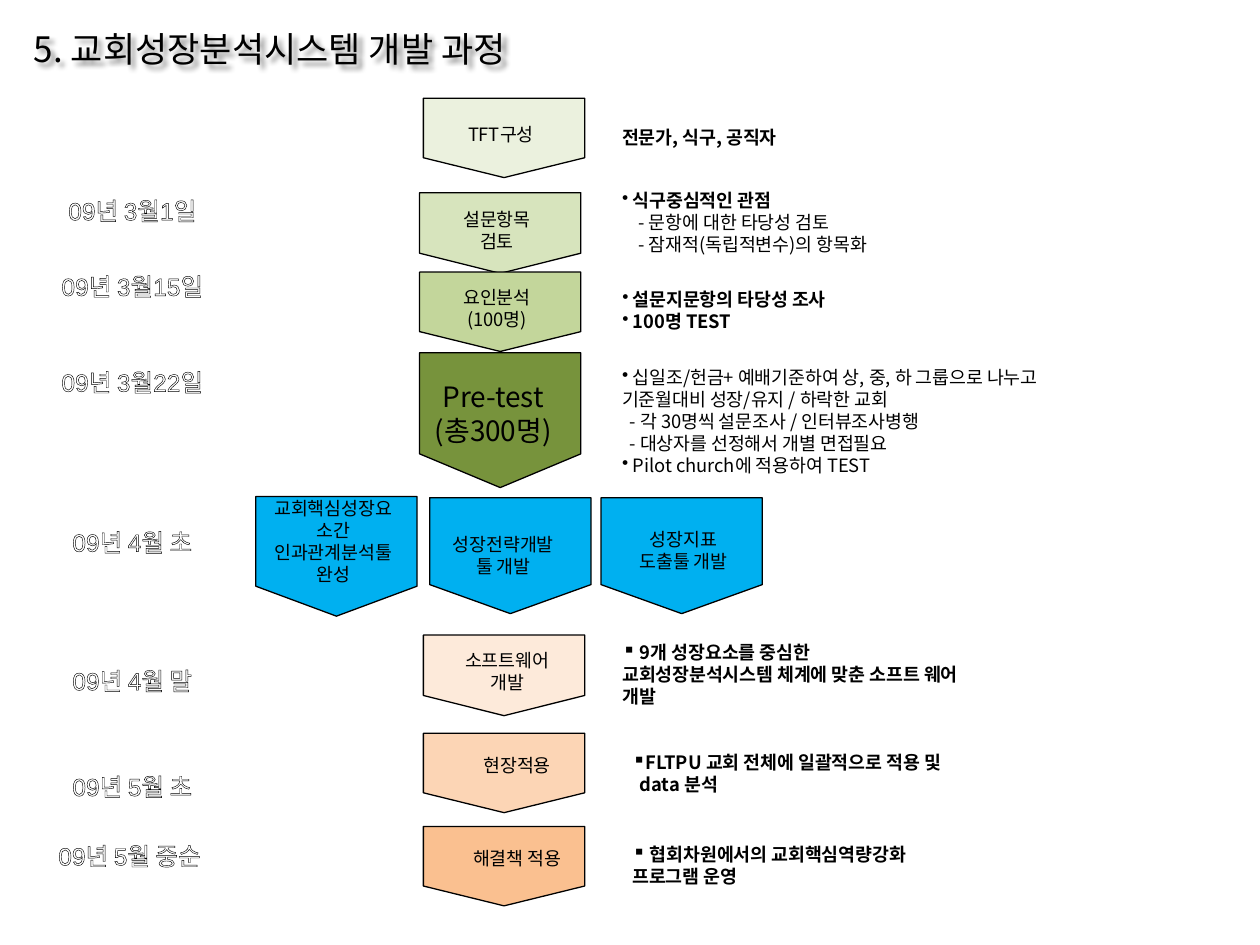
from dataclasses import dataclass

from lxml import etree
from pptx import Presentation
from pptx.dml.color import RGBColor
from pptx.enum.shapes import MSO_SHAPE
from pptx.enum.text import MSO_ANCHOR, PP_ALIGN
from pptx.oxml import parse_xml
from pptx.oxml.ns import nsdecls, qn
from pptx.util import Inches, Pt

PENTAGON = MSO_SHAPE.PENTAGON
TOP, MIDDLE = MSO_ANCHOR.TOP, MSO_ANCHOR.MIDDLE
LEFT, CENTER = PP_ALIGN.LEFT, PP_ALIGN.CENTER


@dataclass(frozen=True)
class Theme:
    """Colours, fonts and type sizes of the slide."""
    ink: str = "000000"
    paper: str = "FFFFFF"
    blue: str = "00B0F0"
    font: str = "Noto Sans CJK KR"
    date_font: str = "Arial"
    title: float = 20
    pretest: float = 16
    date: float = 14
    body: float = 10.5
    line: float = 0.75


@dataclass(frozen=True)
class Box:
    """A rectangle in inches."""
    left: float
    top: float
    width: float
    height: float

    def inside(self, left, top, width, height):
        """Return a box placed relative to this one."""
        return Box(self.left + left, self.top + top, width, height)

    def lengths(self):
        """Return the rectangle as slide lengths."""
        return [Inches(n) for n in (self.left, self.top, self.width, self.height)]


THEME = Theme()
ARROW_WIDTH = 1.28
LABEL_WIDTH = 1.17

# left, top, height, fill, text, label left, label top, label height, type size
STAGES = [
    (3.36, 0.78, 0.63, "EBF1DE", "TFT구성", 0.03, 0, 0.57, THEME.body),
    (3.33, 1.53, 0.64, "D7E4BD", "설문항목\n검토", 0.03, 0.01, 0.57, THEME.body),
    (3.33, 2.16, 0.63, "C3D69B", "요인분석\n(100명)", 0.03, 0, 0.57, THEME.body),
    (3.33, 2.8, 1.07, "77933C", "Pre-test\n(총300명)", 0, 0, 0.96, THEME.pretest),
    (2.03, 3.94, 0.95, THEME.blue, "교회핵심성장요소간 인과관계분석툴완성", 0.03, -0.07, 0.85, THEME.body),
    (3.41, 3.95, 0.92, THEME.blue, "성장전략개발\n툴 개발", 0, 0.17, 0.57, THEME.body),
    (4.77, 3.95, 0.92, THEME.blue, "성장지표\n도출툴 개발", 0.07, 0, 0.83, THEME.body),
    (3.36, 5.04, 0.64, "FDEADA", "소프트웨어\n개발", 0.08, 0, 0.57, THEME.body),
    (3.36, 5.82, 0.63, "FCD5B5", "현장적용", 0.16, -0.03, 0.57, THEME.body),
    (3.36, 6.56, 0.63, "FAC090", "해결책 적용", 0.16, -0.03, 0.57, THEME.body),
]

DATES = [
    (1.46, "09년 3월1일"), (2.06, "09년 3월15일"), (2.82, "09년 3월22일"),
    (4.09, "09년 4월 초"), (5.19, "09년 4월 말"), (6.03, "09년 5월 초"),
    (6.58, "09년 5월 중순 "),
]

# box, then lines of bullet, text, bold, left margin, first-line indent
NOTES = [
    (Box(4.84, 0.95, 2.66, 0.33), [("", "전문가, 식구, 공직자", True, 0, 0)]),
    (Box(4.84, 1.45, 2.5, 0.74), [
        ("•", " 식구중심적인 관점", True, 0, 0),
        ("", "- 문항에 대한 타당성 검토", False, 0.13, 0),
        ("", "- 잠재적(독립적변수)의 항목화", False, 0.13, 0)]),
    (Box(4.84, 2.24, 3.98, 0.45), [
        ("•", " 설문지문항의 타당성 조사", True, 0, 0),
        ("•", " 100명 TEST", True, 0, 0)]),
    (Box(4.84, 2.86, 4.06, 1.15), [
        ("•", " 십일조/헌금+ 예배기준하여 상, 중, 하 그룹으로 나누고 기준월대비 성장/유지 / 하락한 교회", False, 0, 0),
        ("", "- 각 30명씩 설문조사 / 인터뷰조사병행", False, 0.06, 0),
        ("", "- 대상자를 선정해서 개별 면접필요", False, 0.06, 0),
        ("•", " Pilot church에 적용하여 TEST", False, 0, 0)]),
    (Box(4.84, 5.04, 2.89, 0.53), [
        ("▪", " 9개 성장요소를 중심한 교회성장분석시스템 체계에 맞춘 소프트 웨어 개발", True, 0, 0)]),
    (Box(4.92, 5.91, 2.73, 0.53), [
        ("▪", "FLTPU 교회 전체에 일괄적으로 적용 및 data 분석", True, 0.06, -0.06)]),
    (Box(4.92, 6.64, 2.73, 0.53), [
        ("▪", " 협회차원에서의 교회핵심역량강화 프로그램 운영", True, 0, 0)]),
]


def add_text(page, box, text, size, align=LEFT, anchor=TOP, font=THEME.font, color=THEME.ink):
    """Add a wrapped text box and return it."""
    shape = page.shapes.add_textbox(*box.lengths())
    frame = shape.text_frame
    frame.word_wrap = True
    frame.vertical_anchor = anchor
    frame.text = text
    for para in frame.paragraphs:
        para.alignment = align
        for span in para.runs:
            span.font.size = Pt(size)
            span.font.name = font
            span.font.color.rgb = RGBColor.from_string(color)
            east = etree.SubElement(span.font._element, qn("a:ea"))
            east.set("typeface", THEME.font)
    return shape


def add_title(page, box):
    """Add the heading with its soft shadow."""
    shape = add_text(page, box, "5. 교회성장분석시스템 개발 과정", THEME.title)
    para = shape.text_frame.paragraphs[0]
    para.line_spacing = 1.5
    para.space_before = Pt(THEME.title / 2)
    shape._element.spPr.append(parse_xml(
        f'<a:effectLst {nsdecls("a")}><a:outerShdw blurRad="38100" dist="38100" dir="2700000">'
        f'<a:srgbClr val="{THEME.ink}"><a:alpha val="45000"/></a:srgbClr>'
        '</a:outerShdw></a:effectLst>'))


def add_stage(page, box, fill, text, label, size):
    """Add a downward pentagon filling the box, with its label."""
    shift = (box.width - box.height) / 2
    turned = box.inside(shift, -shift, box.height, box.width)
    arrow = page.shapes.add_shape(PENTAGON, *turned.lengths())
    arrow.rotation = 90
    arrow.adjustments[0] = 0.25
    arrow.shadow.inherit = False
    arrow.fill.solid()
    arrow.fill.fore_color.rgb = RGBColor.from_string(fill)
    arrow.line.color.rgb = RGBColor.from_string(THEME.ink)
    arrow.line.width = Pt(THEME.line)
    add_text(page, label, text, size, CENTER, MIDDLE)


def add_date(page, box, text):
    """Add a white date with outlined letters."""
    shape = add_text(page, box, text, THEME.date, CENTER, MIDDLE, THEME.date_font, THEME.paper)
    span = shape.text_frame.paragraphs[0].runs[0]
    span.font._element.insert(0, parse_xml(
        f'<a:ln {nsdecls("a")} w="{Pt(THEME.line)}"><a:solidFill>'
        f'<a:srgbClr val="{THEME.ink}"/></a:solidFill></a:ln>'))


def add_note(page, box, lines):
    """Add the remarks that belong to a stage."""
    shape = add_text(page, box, "\n".join(line[1] for line in lines), THEME.body)
    for para, (bullet, _, bold, margin, indent) in zip(shape.text_frame.paragraphs, lines):
        para.runs[0].font.bold = bold
        properties = para._p.get_or_add_pPr()
        properties.set("marL", str(Inches(margin)))
        properties.set("indent", str(Inches(indent)))
        if bullet:
            etree.SubElement(properties, qn("a:buChar")).set("char", bullet)


def main():
    """Build the slide and save it."""
    deck = Presentation()
    deck.slide_width, deck.slide_height = Inches(10), Inches(7.5)
    page = deck.slides.add_slide(deck.slide_layouts[6])
    for left, top, height, fill, text, label_left, label_top, label_height, size in STAGES:
        box = Box(left, top, ARROW_WIDTH, height)
        label = box.inside(label_left, label_top, LABEL_WIDTH, label_height)
        add_stage(page, box, fill, text, label, size)
    for box, lines in NOTES:
        add_note(page, box, lines)
    for top, text in DATES:
        add_date(page, Box(0.31, top, 1.48, 0.42), text)
    add_title(page, Box(0.17, 0, 4.99, 0.61))
    deck.save("out.pptx")


if __name__ == "__main__":
    main()
